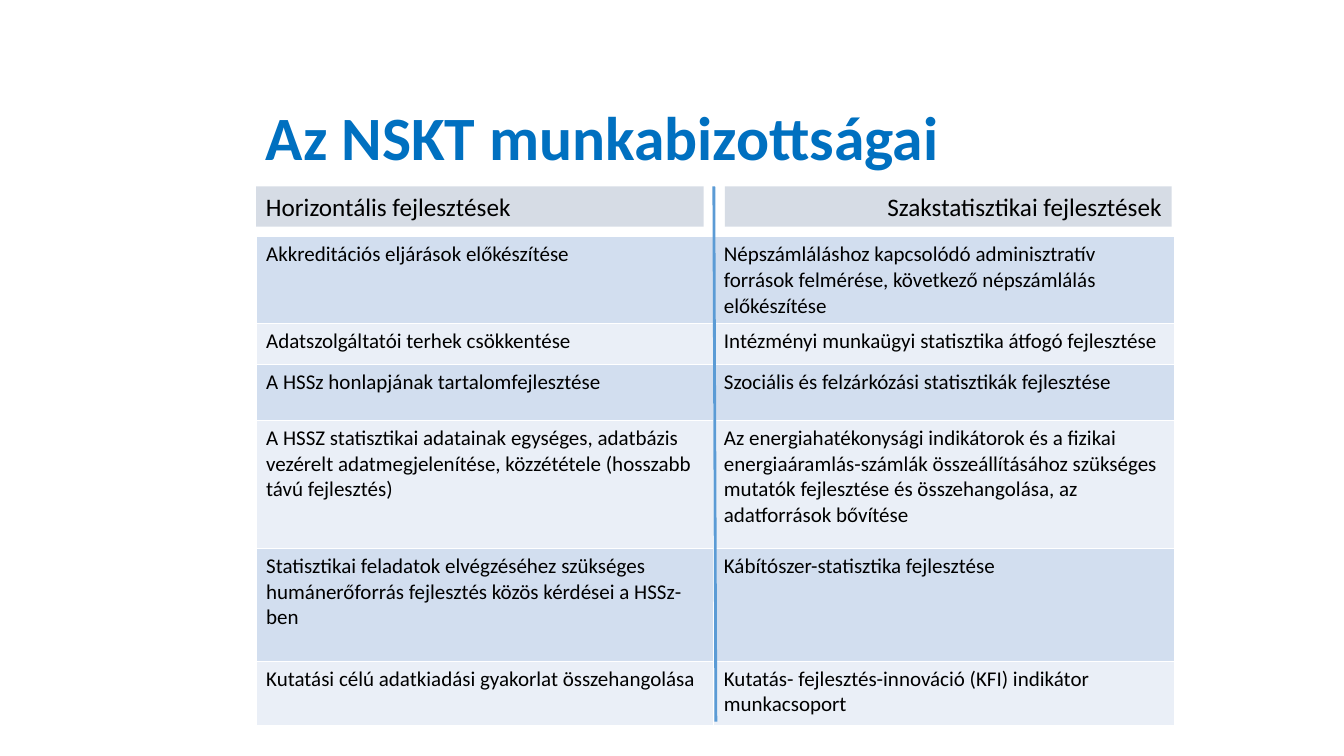
from lxml import etree
from pptx import Presentation
from pptx.dml.color import RGBColor
from pptx.enum.shapes import MSO_CONNECTOR, MSO_SHAPE
from pptx.enum.text import MSO_ANCHOR, PP_ALIGN
from pptx.oxml import parse_xml
from pptx.oxml.ns import nsdecls, qn
from pptx.util import Inches, Pt

LEFT, RIGHT = PP_ALIGN.LEFT, PP_ALIGN.RIGHT
TOP, MIDDLE = MSO_ANCHOR.TOP, MSO_ANCHOR.MIDDLE
RECTANGLE, STRAIGHT = MSO_SHAPE.RECTANGLE, MSO_CONNECTOR.STRAIGHT

BLACK = RGBColor(0x00, 0x00, 0x00)
TITLE_BLUE = RGBColor(0x00, 0x70, 0xC0)
HEADER_GRAY = RGBColor(0xD6, 0xDC, 0xE5)
BANDS = (RGBColor(0xD2, 0xDE, 0xEF), RGBColor(0xEA, 0xEF, 0xF7))
DIVIDER_BLUE = RGBColor(0x5B, 0x9B, 0xD5)

BORDER = ('<a:{side} w="12700" {ns}><a:solidFill><a:srgbClr val="FFFFFF"/>'
          '</a:solidFill></a:{side}>')
TEXT_SHADOW = ('<a:effectLst {ns}><a:outerShdw blurRad="38100" dist="38100" '
               'dir="2700000" algn="tl"><a:srgbClr val="000000">'
               '<a:alpha val="43000"/></a:srgbClr></a:outerShdw></a:effectLst>')

COMMITTEES = [
    ("Akkreditációs eljárások előkészítése",
     "Népszámláláshoz kapcsolódó adminisztratív források felmérése, "
     "következő népszámlálás előkészítése"),
    ("Adatszolgáltatói terhek csökkentése",
     "Intézményi munkaügyi statisztika átfogó fejlesztése"),
    ("A HSSz honlapjának tartalomfejlesztése",
     "Szociális és felzárkózási statisztikák fejlesztése"),
    ("A HSSZ statisztikai adatainak egységes, adatbázis vezérelt "
     "adatmegjelenítése, közzététele (hosszabb távú fejlesztés)",
     "Az energiahatékonysági indikátorok és a fizikai energiaáramlás-számlák "
     "összeállításához szükséges mutatók fejlesztése és összehangolása, "
     "az adatforrások bővítése"),
    ("Statisztikai feladatok elvégzéséhez szükséges humánerőforrás fejlesztés "
     "közös kérdései a HSSz-ben",
     "Kábítószer-statisztika fejlesztése"),
    ("Kutatási célú adatkiadási gyakorlat összehangolása",
     "Kutatás- fejlesztés-innováció (KFI) indikátor munkacsoport"),
]
COLUMN_WIDTHS = (4.54, 4.57)
ROW_HEIGHTS = (0.86, 0.41, 0.55, 1.27, 1.12, 0.64)


def write_text(frame, text, size=15, color=BLACK, bold=False, align=LEFT,
               anchor=TOP, spacing=None, shadow=False):
    frame.word_wrap = True
    frame.vertical_anchor = anchor
    para = frame.paragraphs[0]
    para.alignment = align
    if spacing:
        para.line_spacing = spacing
    span = para.add_run()
    span.text = text
    span.font.name = "Calibri"
    span.font.size = Pt(size)
    span.font.bold = bold
    span.font.color.rgb = color
    if shadow:
        fill = span.font._element.find(qn("a:solidFill"))
        fill.addnext(parse_xml(TEXT_SHADOW.format(ns=nsdecls("a"))))


class SlideBuilder:
    def __init__(self, page):
        self.shapes = page.shapes

    def title(self, text, *place):
        box = self.shapes.add_textbox(*map(Inches, place))
        write_text(box.text_frame, text, size=44, color=TITLE_BLUE, bold=True,
                   anchor=MIDDLE, spacing=0.9, shadow=True)

    def header(self, text, *place, align=LEFT):
        box = self.shapes.add_shape(RECTANGLE, *map(Inches, place))
        box.shadow.inherit = False
        box.fill.solid()
        box.fill.fore_color.rgb = HEADER_GRAY
        box.line.fill.background()
        write_text(box.text_frame, text, size=18, align=align)

    def table(self, rows, left, top, widths, heights):
        place = map(Inches, (left, top, sum(widths), sum(heights)))
        table = self.shapes.add_table(len(rows), len(widths), *place).table
        table.first_row = False
        for column, width in zip(table.columns, widths):
            column.width = Inches(width)
        for index, (row, height) in enumerate(zip(table.rows, heights)):
            row.height = Inches(height)
            for cell, text in zip(row.cells, rows[index]):
                self.cell(cell, text, BANDS[index % 2])

    def cell(self, cell, text, color):
        write_text(cell.text_frame, text)
        cell.fill.solid()
        cell.fill.fore_color.rgb = color
        properties = cell._tc.get_or_add_tcPr()
        for position, side in enumerate(("lnL", "lnR", "lnT", "lnB")):
            border = BORDER.format(side=side, ns=nsdecls("a"))
            properties.insert(position, parse_xml(border))

    def divider(self, *ends):
        line = self.shapes.add_connector(STRAIGHT, *map(Inches, ends))
        line.line.color.rgb = DIVIDER_BLUE
        line.line.width = Pt(2)
        etree.SubElement(line._element.spPr, qn("a:effectLst"))


def main():
    deck = Presentation()
    deck.slide_width, deck.slide_height = Inches(13.33), Inches(7.5)
    builder = SlideBuilder(deck.slides.add_slide(deck.slide_layouts[6]))

    # Title
    builder.title("Az NSKT munkabizottságai", 2.54, 0.93, 9.07, 0.92)

    # Committees in two columns
    builder.table(COMMITTEES, 2.54, 2.35, COLUMN_WIDTHS, ROW_HEIGHTS)

    # Column headers and the line between them
    builder.header("Horizontális fejlesztések", 2.54, 1.85, 4.44, 0.4)
    builder.header("Szakstatisztikai fejlesztések", 7.19, 1.85, 4.43, 0.4,
                   align=RIGHT)
    builder.divider(7.08, 1.85, 7.1, 7.16)

    deck.save("out.pptx")


if __name__ == "__main__":
    main()
